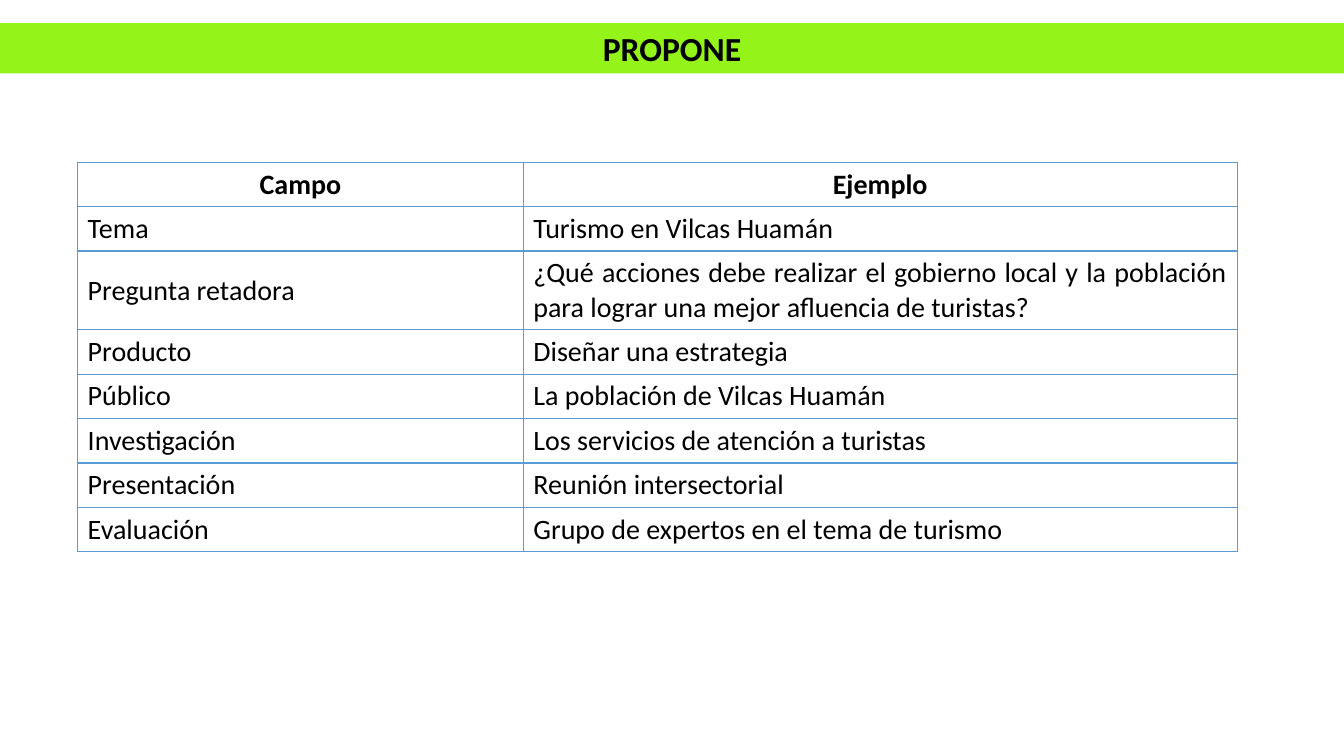
from lxml.etree import SubElement
from pptx import Presentation
from pptx.dml.color import RGBColor
from pptx.enum.shapes import MSO_SHAPE
from pptx.enum.text import MSO_ANCHOR, PP_ALIGN
from pptx.oxml.ns import qn
from pptx.util import Inches, Pt

FONT = "Calibri"
BLACK = "000000"
GREEN = "94F319"
BLUE = "5B9BD5"
ROW_HEIGHT = 0.44
TALL_ROW_HEIGHT = 0.78
QUESTION_ROW = 2
FIELDS = [
    ("Campo", "Ejemplo"),
    ("Tema", "Turismo en Vilcas Huamán"),
    ("Pregunta retadora", "¿Qué acciones debe realizar el gobierno local y la población "
                          "para lograr una mejor afluencia de turistas?"),
    ("Producto", "Diseñar una estrategia"),
    ("Público", "La población de Vilcas Huamán"),
    ("Investigación", "Los servicios de atención a turistas"),
    ("Presentación", "Reunión intersectorial"),
    ("Evaluación", "Grupo de expertos en el tema de turismo"),
]


def color(value):
    return RGBColor.from_string(value)


def write_text(text_frame, text, size, bold, alignment):
    text_frame.text = text
    text_frame.word_wrap = True
    paragraph = text_frame.paragraphs[0]
    paragraph.alignment = alignment
    font = paragraph.font
    font.name = FONT
    font.size = Pt(size)
    font.bold = bold
    font.color.rgb = color(BLACK)


def set_borders(cell, line_color, width):
    properties = cell._tc.get_or_add_tcPr()
    for side in ("a:lnL", "a:lnR", "a:lnT", "a:lnB"):
        line = SubElement(properties, qn(side), w=str(Pt(width)))
        fill = SubElement(line, qn("a:solidFill"))
        SubElement(fill, qn("a:srgbClr"), val=line_color)


def add_title_band(slide, left, top, width, height):
    band = slide.shapes.add_shape(MSO_SHAPE.RECTANGLE, Inches(left), Inches(top),
                                  Inches(width), Inches(height))
    band.shadow.inherit = False
    band.fill.solid()
    band.fill.fore_color.rgb = color(GREEN)
    band.line.fill.background()
    band.text_frame.vertical_anchor = MSO_ANCHOR.MIDDLE
    write_text(band.text_frame, "PROPONE", 24, True, PP_ALIGN.CENTER)


def add_fields_table(slide, left, top, column_widths):
    heights = [TALL_ROW_HEIGHT if index == QUESTION_ROW else ROW_HEIGHT
               for index in range(len(FIELDS))]
    frame = slide.shapes.add_table(len(FIELDS), len(column_widths), Inches(left), Inches(top),
                                   Inches(sum(column_widths)), Inches(sum(heights)))
    table = frame.table
    table.first_row = False
    table.horz_banding = False
    for column, width in zip(table.columns, column_widths):
        column.width = Inches(width)
    for row_index, (row, height, texts) in enumerate(zip(table.rows, heights, FIELDS)):
        row.height = Inches(height)
        is_header = row_index == 0
        for column_index, (cell, text) in enumerate(zip(row.cells, texts)):
            if is_header:
                alignment = PP_ALIGN.CENTER
            elif column_index == 1 and row_index >= QUESTION_ROW:
                alignment = PP_ALIGN.JUSTIFY
            else:
                alignment = PP_ALIGN.LEFT
            write_text(cell.text_frame, text, 20, is_header, alignment)
            cell.vertical_anchor = MSO_ANCHOR.MIDDLE
            set_borders(cell, BLUE, 1)
            cell.fill.background()


def main():
    presentation = Presentation()
    presentation.slide_width = Inches(13.33)
    presentation.slide_height = Inches(7.5)
    slide = presentation.slides.add_slide(presentation.slide_layouts[6])
    add_fields_table(slide, 0.77, 1.61, (4.42, 7.08))
    add_title_band(slide, 0, 0.23, 13.33, 0.5)
    presentation.save("out.pptx")


if __name__ == "__main__":
    main()
